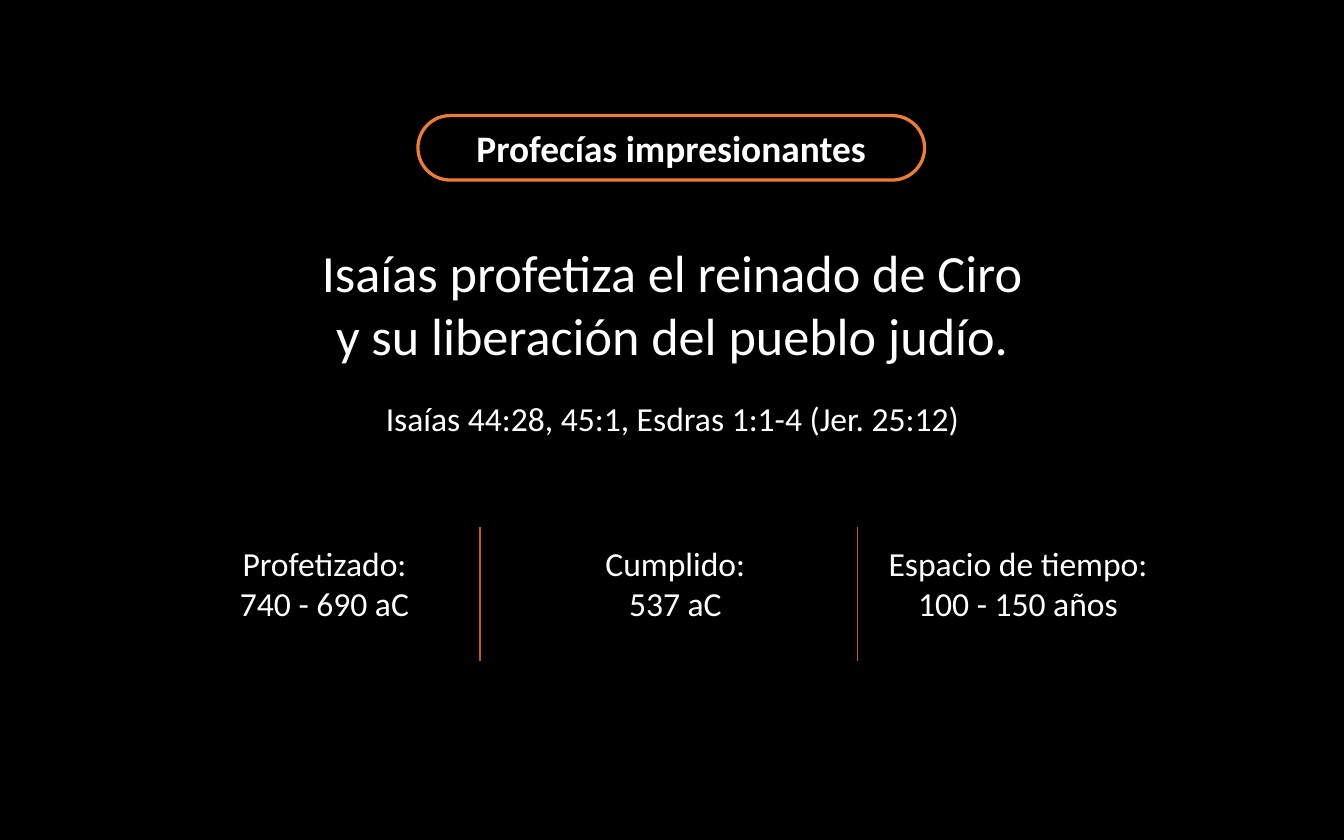
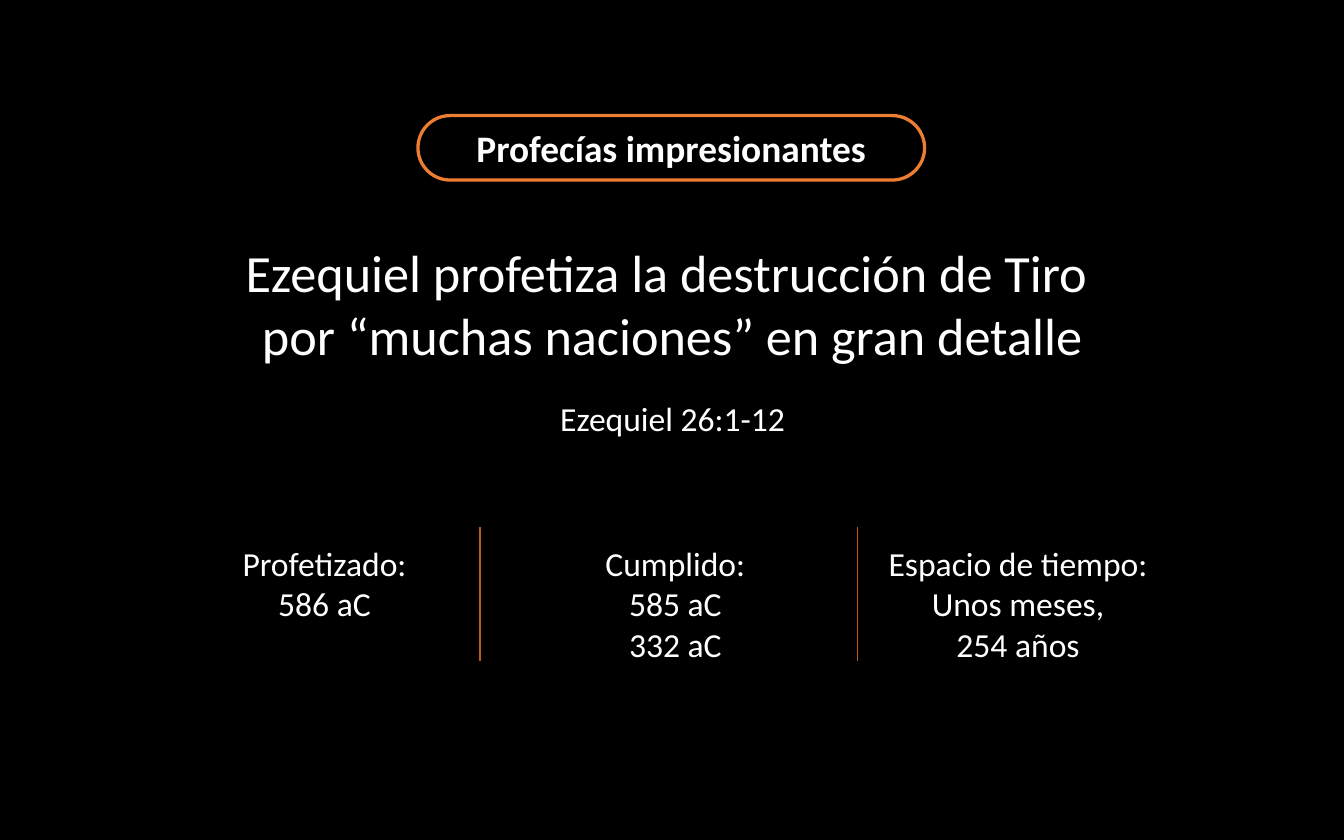
"""Builds two slides about impressive prophecies."""
from lxml import etree
from pptx import Presentation
from pptx import util as u
from pptx.dml import color
from pptx.enum import shapes, text
from pptx.oxml import ns

PX = 9144
BLACK, WHITE, ORANGE, RUST = "000000", "FFFFFF", "ED7D31", "C55A11"
FONT = "Calibri"
HEADING = "Profecías impresionantes"
FACT_LABELS = ["Profetizado:", "Cumplido:", "Espacio de tiempo:"]
FACT_LEFTS = [126, 387, 642]
DIVIDERS = [357, 638]
LINE_HEIGHT = 30

PROPHECIES = [
    (["Isaías profetiza el reinado de Ciro", "y su liberación del pueblo judío."],
     "Isaías 44:28, 45:1, Esdras 1:1-4 (Jer. 25:12)",
     [["740 - 690 aC"], ["537 aC"], ["100 - 150 años"]]),
    (["Ezequiel profetiza la destrucción de Tiro \vpor “muchas naciones” en gran detalle"],
     "Ezequiel 26:1-12",
     [["586 aC"], ["585 aC\v332 aC"], ["Unos meses,", "254 años"]]),
]


def px(length):
    return u.Emu(length * PX)


def rgb(value):
    return color.RGBColor.from_string(value)


class ProphecyDeck:
    def __init__(self, width, height):
        self.deck = Presentation()
        self.deck.slide_width, self.deck.slide_height = px(width), px(height)
        self.slide = None

    def add_slide(self):
        self.slide = self.deck.slides.add_slide(self.deck.slide_layouts[6])
        fill = self.slide.background.fill
        fill.solid()
        fill.fore_color.rgb = rgb(BLACK)

    def set_lines(self, frame, lines, size, bold=False):
        frame.word_wrap = True
        for index, line in enumerate(lines):
            para = frame.add_paragraph() if index else frame.paragraphs[0]
            para.text = line
            para.alignment = text.PP_ALIGN.CENTER
            para.font.name = FONT
            para.font.size = u.Pt(size)
            para.font.bold = bold
            para.font.color.rgb = rgb(WHITE)

    def pill(self, left, top, width, height, label):
        box = self.slide.shapes.add_shape(
            shapes.MSO_SHAPE.ROUNDED_RECTANGLE, px(left), px(top), px(width), px(height))
        box.adjustments[0] = 0.5
        box.shadow.inherit = False
        box.fill.background()
        box.line.color.rgb = rgb(ORANGE)
        box.line.width = u.Pt(1.75)
        box.text_frame.vertical_anchor = text.MSO_ANCHOR.MIDDLE
        self.set_lines(box.text_frame, [label], 20, bold=True)

    def text_box(self, left, top, width, height, lines, size=18):
        box = self.slide.shapes.add_textbox(px(left), px(top), px(width), px(height))
        self.set_lines(box.text_frame, lines, size)
        box.text_frame.auto_size = text.MSO_AUTO_SIZE.SHAPE_TO_FIT_TEXT

    def divider(self, left, top, bottom):
        line = self.slide.shapes.add_connector(
            shapes.MSO_CONNECTOR.STRAIGHT, px(left), px(bottom), px(left), px(top))
        line.line.color.rgb = rgb(RUST)
        line.line.width = u.Pt(1)
        etree.SubElement(line.element.spPr, ns.qn("a:effectLst"))

    def prophecy(self, statement, verses, facts):
        self.add_slide()
        self.pill(311, 86, 377, 48, HEADING)
        self.text_box(66, 174, 868, 104, statement, size=28)
        self.text_box(266, 291, 469, 40, [verses])
        for left, label, values in zip(FACT_LEFTS, FACT_LABELS, facts):
            rows = 1 + len("\v".join(values).split("\v"))
            self.text_box(left, 399, 231, 11 + rows * LINE_HEIGHT, [label, *values])
        for left in DIVIDERS:
            self.divider(left, 392, 492)


def main():
    builder = ProphecyDeck(1000, 625)
    for statement, verses, facts in PROPHECIES:
        builder.prophecy(statement, verses, facts)
    builder.deck.save("out.pptx")


if __name__ == "__main__":
    main()
